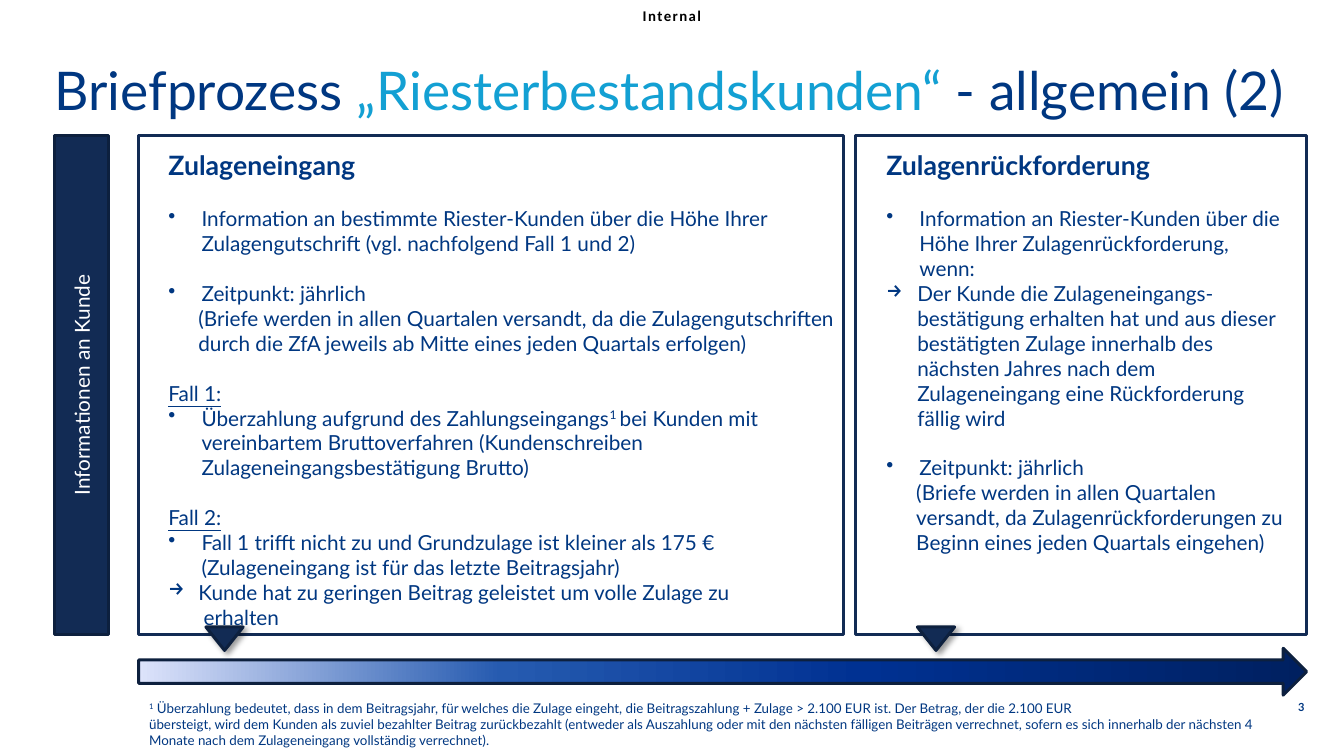
from lxml.etree import SubElement
from pptx import Presentation
from pptx.dml.color import RGBColor
from pptx.enum.shapes import MSO_SHAPE as Kind
from pptx.enum.text import MSO_ANCHOR as Anchor, MSO_AUTO_SIZE as Fit, PP_ALIGN as Align
from pptx.oxml.ns import qn
from pptx.util import Inches, Pt

BLUE, SKY, NAVY, EDGE = "003781", "13A0D3", "122B54", "0D203E"
TOP, TALL = 1.27, 4.68
LEFT, RIGHT = 1.3, 12.25
TAB = 0.51
LINE = 16.8


def tint(code):
    return RGBColor.from_string(code)


def write(frame, text, size=14, color=BLUE, font="Lato", bold=False, under=False,
          base=0, space=0, mark=None, left=0, hang=0, gap=0, align=Align.LEFT, join=False):
    para = frame.paragraphs[-1]
    if para.runs and not join:
        para = frame.add_paragraph()
    if not join:
        para.alignment = align
        para.space_before = Pt(gap)
        props = para._p.get_or_add_pPr()
        props.set("marL", str(Inches(left)))
        props.set("indent", str(-Inches(hang)))
        if mark:
            SubElement(props, qn("a:buChar")).set("char", mark)
        else:
            SubElement(props, qn("a:buNone"))
    run = para.add_run()
    run.text = text
    face = run.font
    face.name, face.size, face.bold, face.underline = font, Pt(size), bold, under
    face.color.rgb = tint(color)
    if base:
        run._r.get_or_add_rPr().set("baseline", str(base * 1000))
    if space:
        run._r.get_or_add_rPr().set("spc", str(space * 100))


deck = Presentation()
deck.slide_width, deck.slide_height = Inches(12.6), Inches(7.09)
slide = deck.slides.add_slide(deck.slide_layouts[5])

title = slide.shapes.title
title.left, title.top, title.width, title.height = map(Inches, (TAB, 0.51, 11.96, 0.76))
head = title.text_frame
head.auto_size = Fit.NONE
head.word_wrap = True
head.vertical_anchor = Anchor.TOP
head.margin_left = head.margin_top = head.margin_right = head.margin_bottom = 0
write(head, "Briefprozess ", size=36)
write(head, "„Riesterbestandskunden“ ", size=36, color=SKY, join=True)
write(head, "- allgemein (2)", size=36, join=True)
head.paragraphs[0].line_spacing = Pt(45)

boxes = [
    (5.93, 0, 0.74, 0.29, 0, 0, Anchor.MIDDLE),
    (12.09, 6.18, 0.51, 0.9, 0.08, 0, Anchor.MIDDLE),
    (1.58, 1.4, 6.4, 5.13, 0, 0, Anchor.TOP),
    (8.31, 1.4, 3.78, 4.4, 0, 0, Anchor.TOP),
    (LEFT, 6.52, 10.94, 0.51, 0.1, 0.05, Anchor.TOP),
]
frames = []
for x, y, w, h, side, rim, anchor in boxes:
    frame = slide.shapes.add_textbox(*map(Inches, (x, y, w, h))).text_frame
    frame.word_wrap = True
    frame.vertical_anchor = anchor
    frame.margin_left = frame.margin_right = Inches(side)
    frame.margin_top = frame.margin_bottom = Inches(rim)
    frames.append(frame)
label, page, credit, claim, note = frames

write(label, "Internal", size=10, color="000000", font="Calibri", bold=True, space=1,
      align=Align.CENTER)
write(page, "3", size=7.5, bold=True)

dot = dict(mark="•", left=0.31, hang=0.31)
write(credit, "Zulageneingang", size=18, bold=True)
write(credit, "Information an bestimmte Riester-Kunden über die Höhe Ihrer Zulagengutschrift "
      "(vgl. nachfolgend Fall 1 und 2)", gap=LINE, **dot)
write(credit, "Zeitpunkt: jährlich", gap=LINE, **dot)
write(credit, "(Briefe werden in allen Quartalen versandt, da die Zulagengutschriften "
      "durch die ZfA jeweils ab Mitte eines jeden Quartals erfolgen)", left=0.28)
write(credit, "Fall 1:", under=True, gap=LINE)
write(credit, "Überzahlung aufgrund des Zahlungseingangs", **dot)
write(credit, "1 ", base=30, join=True)
write(credit, "bei Kunden mit vereinbartem Bruttoverfahren (Kundenschreiben "
      "Zulageneingangsbestätigung Brutto)", join=True)
write(credit, "Fall 2:", under=True, gap=LINE)
write(credit, "Fall 1 trifft nicht zu und Grundzulage ist kleiner als 175 € "
      "(Zulageneingang ist für das letzte Beitragsjahr)", **dot)
write(credit, "Kunde hat zu geringen Beitrag geleistet um volle Zulage zu",
      mark="→", left=0.28, hang=0.28)
write(credit, "erhalten", left=0.33)

write(claim, "Zulagenrückforderung", size=18, bold=True)
write(claim, "Information an Riester-Kunden über die Höhe Ihrer Zulagenrückforderung, wenn:",
      gap=LINE, **dot)
write(claim, "Der Kunde die Zulageneingangs-bestätigung erhalten hat und aus dieser "
      "bestätigten Zulage innerhalb des nächsten Jahres nach dem Zulageneingang "
      "eine Rückforderung fällig wird", mark="→", left=0.29, hang=0.29)
write(claim, "Zeitpunkt: jährlich", gap=LINE, **dot)
for text in ("(Briefe werden in allen Quartalen", "versandt, da Zulagenrückforderungen zu",
             "Beginn eines jeden Quartals eingehen)"):
    write(claim, text, left=0.28)

write(note, "1", size=9, base=30)
write(note, " Überzahlung bedeutet, dass in dem Beitragsjahr, für welches die Zulage eingeht, "
      "die Beitragszahlung + Zulage > 2.100 EUR ist. Der Betrag, der die 2.100 EUR",
      size=9, join=True)
write(note, "übersteigt, wird dem Kunden als zuviel bezahlter Beitrag zurückbezahlt (entweder "
      "als Auszahlung oder mit den nächsten fälligen Beiträgen verrechnet, sofern es sich "
      "innerhalb der nächsten 4 Monate nach dem Zulageneingang vollständig verrechnet).", size=9)

parts = [
    (Kind.RECTANGLE, 8.02, TOP, RIGHT - 8.02, TALL, 0, None, NAVY),
    (Kind.RECTANGLE, LEFT, TOP, 6.61, TALL, 0, None, NAVY),
    (Kind.RIGHT_ARROW, LEFT, 6.08, RIGHT - LEFT, 0.44, 0, NAVY, EDGE),
    (Kind.ISOSCELES_TRIANGLE, 1.93, 5.88, 0.35, 0.22, 180, NAVY, EDGE),
    (Kind.ISOSCELES_TRIANGLE, 8.6, 5.88, 0.35, 0.22, 180, NAVY, EDGE),
    (Kind.RECTANGLE, TAB - (TALL - TAB) / 2, TOP + (TALL - TAB) / 2, TALL, TAB, 270, NAVY, EDGE),
]
for kind, x, y, w, h, turn, fill, line in parts:
    shape = slide.shapes.add_shape(kind, *map(Inches, (x, y, w, h)))
    shape.shadow.inherit = False
    shape.rotation = turn
    shape.line.color.rgb = tint(line)
    shape.line.width = Pt(2)
    props = shape._element.spPr
    if kind == Kind.RIGHT_ARROW:
        shape.fill.gradient()
        shape.fill.gradient_angle = 0
        stops = props.find(qn("a:gradFill")).find(qn("a:gsLst"))
        stops.clear()
        for pos, code in ((0, "DDE3FB"), (31, "265BB0"), (62, "003192"), (100, "002060")):
            stop = SubElement(stops, qn("a:gs"), pos=str(pos * 1000))
            SubElement(stop, qn("a:srgbClr"), val=code)
    elif fill:
        shape.fill.solid()
        shape.fill.fore_color.rgb = tint(fill)
    else:
        shape.fill.background()
    if kind == Kind.ISOSCELES_TRIANGLE:
        shade = SubElement(props.find(qn("a:effectLst")), qn("a:outerShdw"),
                           blurRad=str(Pt(4)), dist=str(Pt(3)), dir=str(45 * 60000))
        black = SubElement(shade, qn("a:srgbClr"), val="000000")
        SubElement(black, qn("a:alpha"), val="40000")

tab = shape.text_frame
tab.vertical_anchor = Anchor.MIDDLE
tab.margin_left = tab.margin_right = 0
tab.margin_top = tab.margin_bottom = Inches(0.04)
write(tab, "Informationen an Kunde", color="FFFFFF", align=Align.CENTER)

deck.save("out.pptx")
